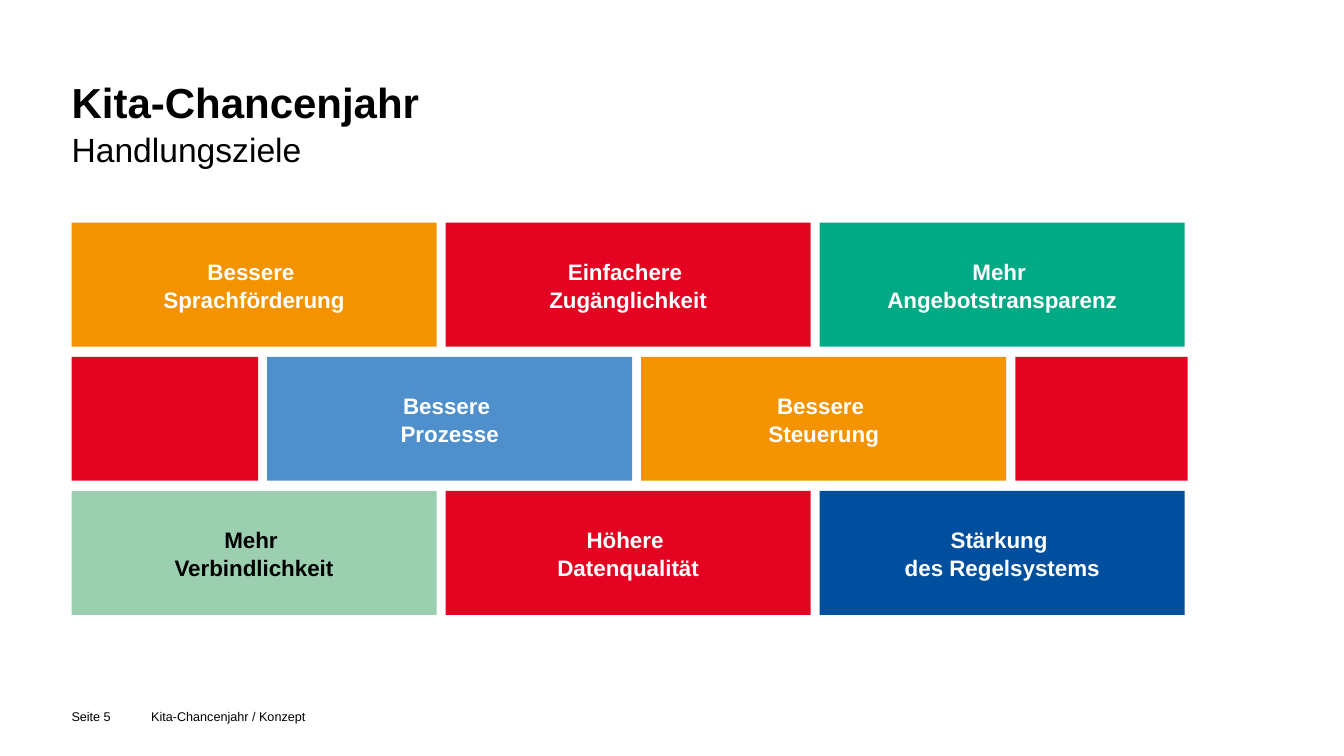
import dataclasses
import typing

import pptx
import pptx.dml.color
import pptx.enum.shapes
import pptx.enum.text
import pptx.util

Inches = pptx.util.Inches


@dataclasses.dataclass(frozen=True)
class Theme:
    font: str = "Arial"
    black: str = "000000"
    white: str = "FFFFFF"
    orange: str = "F39300"
    red: str = "E40422"
    green: str = "00AA84"
    mint: str = "9BCFAF"
    sky: str = "4F90CC"
    navy: str = "004F9F"
    title_size: int = 30
    subtitle_size: int = 24
    goal_size: int = 16
    footer_size: int = 9
    line_spacing: float = 1.05


THEME = Theme()
LEFT = 0.71
TOP = 2.21
GAP = 0.09
ROW_PITCH = 1.33
BRICK_HEIGHT = 1.23
BRICK_WIDTH = 3.62


@dataclasses.dataclass(frozen=True)
class Line:
    text: str
    size: int
    bold: bool = False
    color: str = THEME.black


@dataclasses.dataclass(frozen=True)
class Brick:
    fill: str
    words: tuple[str, ...] = ()
    color: str = THEME.white
    width: float = BRICK_WIDTH


@dataclasses.dataclass(frozen=True)
class Footer:
    text: str
    left: float
    width: float


WALL = (
    (
        Brick(THEME.orange, ("Bessere ", "Sprachförderung")),
        Brick(THEME.red, ("Einfachere ", "Zugänglichkeit")),
        Brick(THEME.green, ("Mehr ", "Angebotstransparenz")),
    ),
    (
        Brick(THEME.red, width=1.85),
        Brick(THEME.sky, ("Bessere ", "Prozesse")),
        Brick(THEME.orange, ("Bessere ", "Steuerung")),
        Brick(THEME.red, width=1.71),
    ),
    (
        Brick(THEME.mint, ("Mehr ", "Verbindlichkeit"), THEME.black),
        Brick(THEME.red, ("Höhere ", "Datenqualität")),
        Brick(THEME.navy, ("Stärkung ", "des Regelsystems")),
    ),
)
FOOTERS = (
    Footer("Seite 5", LEFT, 0.7),
    Footer("Kita-Chancenjahr / Konzept", 1.5, 9.43),
)
FLUSH_FRAME = {
    "margin_left": 0,
    "margin_top": 0,
    "margin_right": 0,
    "margin_bottom": 0,
    "word_wrap": True,
    "auto_size": pptx.enum.text.MSO_AUTO_SIZE.NONE,
    "vertical_anchor": pptx.enum.text.MSO_ANCHOR.TOP,
}
BRICK_FRAME = {
    "word_wrap": True,
    "vertical_anchor": pptx.enum.text.MSO_ANCHOR.MIDDLE,
}


def apply_format(target: typing.Any, values: dict[str, typing.Any]) -> None:
    for name, value in values.items():
        setattr(target, name, value)


def write_lines(
    shape: typing.Any,
    lines: typing.Sequence[Line],
    frame_format: dict[str, typing.Any],
    alignment: pptx.enum.text.PP_ALIGN = pptx.enum.text.PP_ALIGN.LEFT,
) -> None:
    apply_format(shape.text_frame, frame_format)
    paragraph = shape.text_frame.paragraphs[0]
    apply_format(paragraph, {"alignment": alignment, "line_spacing": THEME.line_spacing})
    for index, line in enumerate(lines):
        if index:
            paragraph.add_line_break()
        run = paragraph.add_run()
        run.text = line.text
        apply_format(run.font, {
            "name": THEME.font,
            "size": pptx.util.Pt(line.size),
            "bold": line.bold,
        })
        run.font.color.rgb = pptx.dml.color.RGBColor.from_string(line.color)


def draw_title(slide: typing.Any) -> None:
    title = slide.shapes.title
    apply_format(title, {
        "left": Inches(LEFT),
        "top": Inches(0.73),
        "width": Inches(11.91),
        "height": Inches(1.18),
    })
    write_lines(title, (
        Line("Kita-Chancenjahr", THEME.title_size, bold=True),
        Line("Handlungsziele", THEME.subtitle_size),
    ), FLUSH_FRAME)


def draw_brick(slide: typing.Any, brick: Brick, left: float, top: float) -> None:
    shape = slide.shapes.add_shape(
        pptx.enum.shapes.MSO_SHAPE.RECTANGLE,
        Inches(left), Inches(top), Inches(brick.width), Inches(BRICK_HEIGHT),
    )
    shape.shadow.inherit = False
    shape.fill.solid()
    shape.fill.fore_color.rgb = pptx.dml.color.RGBColor.from_string(brick.fill)
    shape.line.fill.background()
    lines = [Line(word, THEME.goal_size, True, brick.color) for word in brick.words]
    write_lines(shape, lines, BRICK_FRAME, pptx.enum.text.PP_ALIGN.CENTER)


def draw_wall(slide: typing.Any) -> None:
    for row, bricks in enumerate(WALL):
        left = LEFT
        for brick in bricks:
            draw_brick(slide, brick, left, TOP + row * ROW_PITCH)
            left += brick.width + GAP


def draw_footer(slide: typing.Any, footer: Footer) -> None:
    box = slide.shapes.add_textbox(
        Inches(footer.left), Inches(7.03), Inches(footer.width), Inches(0.21)
    )
    write_lines(box, (Line(footer.text, THEME.footer_size),), FLUSH_FRAME)


def main() -> None:
    presentation = pptx.Presentation()
    presentation.slide_width = Inches(13.33)
    presentation.slide_height = Inches(7.5)
    slide = presentation.slides.add_slide(presentation.slide_layouts[5])
    draw_title(slide)
    draw_wall(slide)
    for footer in FOOTERS:
        draw_footer(slide, footer)
    presentation.save("out.pptx")


if __name__ == "__main__":
    main()
